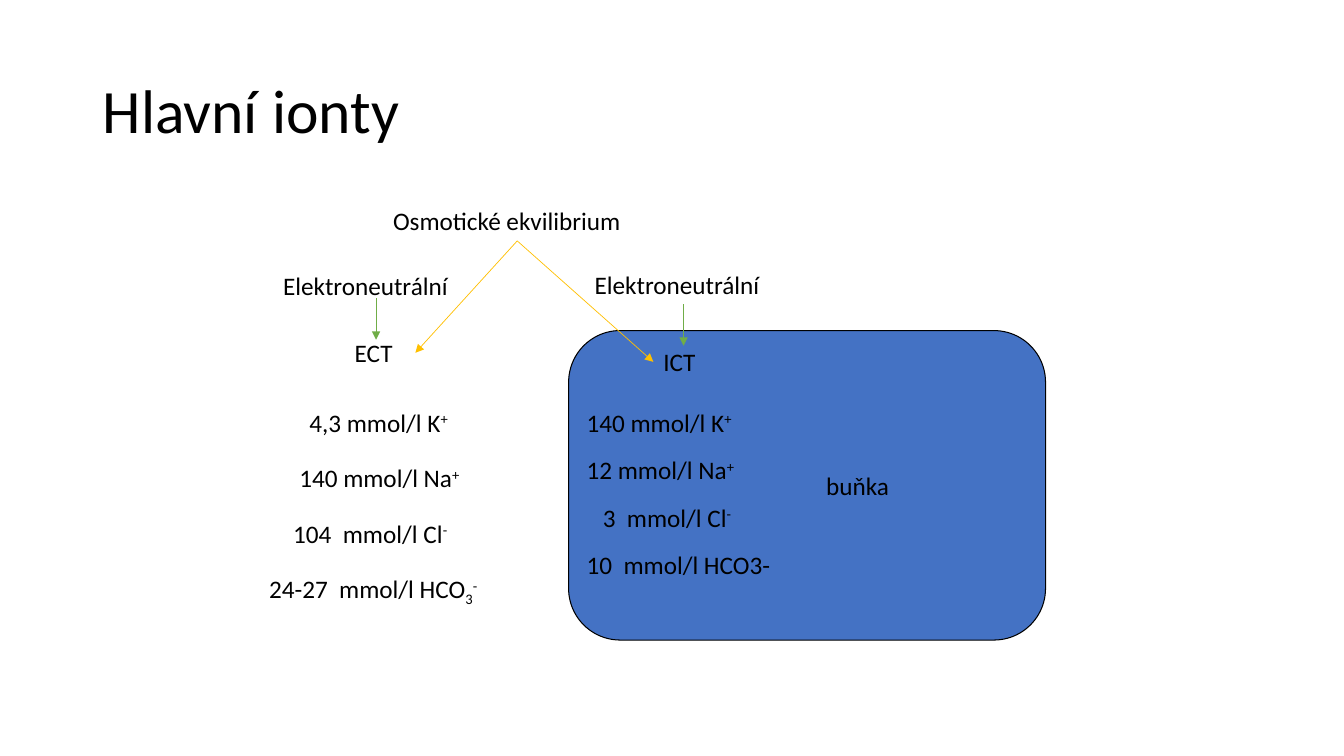
from lxml import etree
from pptx import Presentation
from pptx.dml.color import RGBColor
from pptx.enum import shapes, text
from pptx.oxml import ns
from pptx.util import Inches, Pt

FONT = "Calibri"
COLORS = {"text": "000000", "cell": "4472C4", "neutral": "70AD47", "osmotic": "FFC000"}
SUPER, SUB = 30000, -25000

TITLE = "Hlavní ionty"
CELL_NAME = "buňka"
# left, top, width, wording
LABELS = [
    (3.8, 1.99, 2.66, "Osmotické ekvilibrium"),
    (2.71, 2.63, 1.97, "Elektroneutrální"),
    (5.8, 2.62, 1.97, "Elektroneutrální"),
    (3.42, 3.3, 0.7, "ECT"),
    (6.48, 3.39, 0.61, "ICT"),
]
# left, width, then pieces of wording with their baseline shift
OUTSIDE_IONS = [
    (2.97, 1.69, [("4,3 mmol/l K", 0), ("+", SUPER)]),
    (2.87, 1.91, [("140 mmol/l Na", 0), ("+", SUPER)]),
    (2.81, 1.85, [("104  mmol/l Cl", 0), ("-", SUPER)]),
    (2.57, 2.49, [("24-27  mmol/l HCO", 0), ("3", SUB), ("-", SUPER)]),
]
INSIDE_IONS = [
    (5.72, 1.76, [("140 mmol/l K", 0), ("+", SUPER)]),
    (5.72, 1.77, [("12 mmol/l Na", 0), ("+", SUPER)]),
    (5.88, 1.58, [("3  mmol/l Cl", 0), ("-", SUPER)]),
    (5.72, 2.22, [("10  mmol/l HCO3-", 0)]),
]
IONS_TOP = 3.99
ION_COLUMNS = [(OUTSIDE_IONS, 0.55), (INSIDE_IONS, 0.47)]  # ions, row step
# start, end, colour
ARROWS = [
    ((6.78, 3.02), (6.78, 3.43), "neutral"),
    ((3.73, 2.96), (3.73, 3.37), "neutral"),
    ((5.13, 2.39), (6.48, 3.59), "osmotic"),
    ((5.13, 2.39), (4.12, 3.5), "osmotic"),
]


def rgb(name):
    return RGBColor.from_string(COLORS[name])


def style(para, size=18):
    para.font.name = FONT
    para.font.size = Pt(size)
    para.font.color.rgb = rgb("text")


def add_title(page):
    title = page.shapes.title
    title.left, title.top = Inches(0.92), Inches(0.4)
    title.width, title.height = Inches(11.5), Inches(1.45)
    title.text_frame.text = TITLE
    title.text_frame.vertical_anchor = text.MSO_ANCHOR.MIDDLE
    para = title.text_frame.paragraphs[0]
    para.alignment = text.PP_ALIGN.LEFT
    para.line_spacing = 0.9
    style(para, 44)


def add_cell(page):
    cell = page.shapes.add_shape(
        shapes.MSO_SHAPE.ROUNDED_RECTANGLE,
        Inches(5.64), Inches(3.28), Inches(4.73), Inches(3.07))
    cell.shadow.inherit = False
    cell.fill.solid()
    cell.fill.fore_color.rgb = rgb("cell")
    cell.line.color.rgb = rgb("text")
    cell.line.width = Pt(0.75)
    frame = cell.text_frame
    frame.text = CELL_NAME
    frame.margin_left = Inches(1.1)
    frame.vertical_anchor = text.MSO_ANCHOR.MIDDLE
    frame.paragraphs[0].alignment = text.PP_ALIGN.CENTER
    style(frame.paragraphs[0])


def add_text(page, left, top, width, pieces):
    box = page.shapes.add_textbox(Inches(left), Inches(top), Inches(width), Inches(0.4))
    box.text_frame.word_wrap = True
    para = box.text_frame.paragraphs[0]
    style(para)
    for wording, shift in pieces:
        span = para.add_run()
        span.text = wording
        if shift:
            span._r.get_or_add_rPr().set("baseline", str(shift))


def add_arrow(page, start, end, color):
    arrow = page.shapes.add_connector(
        shapes.MSO_CONNECTOR.STRAIGHT, *map(Inches, start + end))
    arrow.line.color.rgb = rgb(color)
    arrow.line.width = Pt(0.5)
    etree.SubElement(arrow.line._get_or_add_ln(), ns.qn("a:tailEnd"), type="triangle")
    etree.SubElement(arrow._element.spPr, ns.qn("a:effectLst"))


def main():
    deck = Presentation()
    deck.slide_width, deck.slide_height = Inches(13.33), Inches(7.5)
    page = deck.slides.add_slide(deck.slide_layouts.get_by_name("Title Only"))
    add_title(page)
    add_cell(page)
    for left, top, width, wording in LABELS:
        add_text(page, left, top, width, [(wording, 0)])
    for ions, step in ION_COLUMNS:
        for row, (left, width, pieces) in enumerate(ions):
            add_text(page, left, IONS_TOP + row * step, width, pieces)
    for start, end, color in ARROWS:
        add_arrow(page, start, end, color)
    deck.save("out.pptx")


if __name__ == "__main__":
    main()
